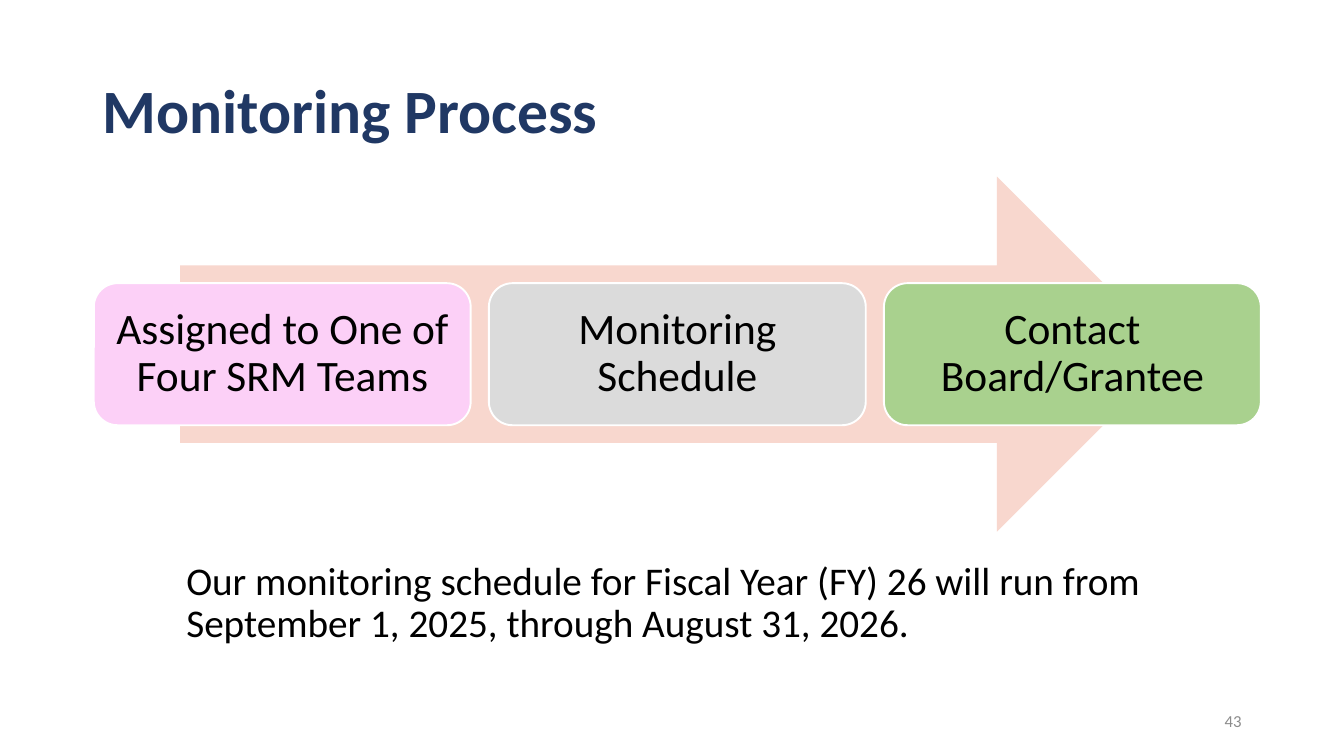
from pptx import Presentation
from pptx.dml.color import RGBColor
from pptx.enum.shapes import MSO_SHAPE as Shape
from pptx.enum.text import MSO_ANCHOR as Anchor, PP_ALIGN as Align
from pptx.util import Pt

NAVY = RGBColor(0x20, 0x38, 0x64)
BLACK = RGBColor(0, 0, 0)
WHITE = RGBColor(0xFF, 0xFF, 0xFF)
GRAY = RGBColor(0x8C, 0x8C, 0x8C)
PEACH = RGBColor(0xF8, 0xD7, 0xCE)
PINK = RGBColor(0xFC, 0xD0, 0xF7)
SILVER = RGBColor(0xDB, 0xDB, 0xDB)
GREEN = RGBColor(0xA9, 0xD1, 0x8E)

STEPS = [
    ("Assigned to One of Four SRM Teams", PINK),
    ("Monitoring Schedule", SILVER),
    ("Contact Board/Grantee", GREEN),
]
SCHEDULE = (
    "Our monitoring schedule for Fiscal Year (FY) 26 will run from "
    "September 1, 2025, through August 31, 2026."
)


def write(shape, text, size, color, align=Align.LEFT, anchor=Anchor.MIDDLE,
          bold=False, line_spacing=0.9, space_before=0):
    """Fill a shape with one styled paragraph."""
    frame = shape.text_frame
    frame.word_wrap = True
    frame.vertical_anchor = anchor
    paragraph = frame.paragraphs[0]
    paragraph.text = text
    paragraph.alignment = align
    paragraph.line_spacing = line_spacing
    paragraph.space_before = Pt(space_before)
    font = paragraph.font
    font.name, font.size, font.bold = "Calibri", Pt(size), bold
    font.color.rgb = color


def add_text(slide, box, text, size, color, **style):
    """Add a text box in the given box, in points."""
    shape = slide.shapes.add_textbox(*map(Pt, box))
    write(shape, text, size, color, **style)


def add_block(slide, kind, box, fill):
    """Add a flat filled shape without outline."""
    shape = slide.shapes.add_shape(kind, *map(Pt, box))
    shape.shadow.inherit = False
    shape.fill.solid()
    shape.fill.fore_color.rgb = fill
    shape.line.fill.background()
    return shape


def add_step(slide, box, text, fill):
    """Add one rounded step card with its label."""
    card = add_block(slide, Shape.ROUNDED_RECTANGLE, box, fill)
    card.line.color.rgb = WHITE
    card.line.width = Pt(1.35)
    frame = card.text_frame
    frame.margin_left = frame.margin_right = Pt(9)
    frame.margin_top = frame.margin_bottom = Pt(9)
    write(card, text, 31, BLACK, align=Align.CENTER)


def add_process(slide, box, steps):
    """Add an arrow with equally spaced step cards across its middle."""
    left, top, width, height = box
    inset, gap = width * 0.074, 13
    arrow = (left + inset, top, width - 2 * inset, height)
    add_block(slide, Shape.RIGHT_ARROW, arrow, PEACH)
    card_width = (width - gap * (len(steps) - 1)) / len(steps)
    card_height = height * 0.4
    card_top = top + (height - card_height) / 2
    for index, (text, fill) in enumerate(steps):
        card_left = left + index * (card_width + gap)
        add_step(slide, (card_left, card_top, card_width, card_height), text, fill)


def main():
    """Build and save the slide."""
    presentation = Presentation()
    presentation.slide_width, presentation.slide_height = Pt(960), Pt(540)
    slide = presentation.slides.add_slide(presentation.slide_layouts[6])
    add_text(slide, (66, 28.75, 828, 104.4), "Monitoring Process", 44, NAVY, bold=True)
    add_process(slide, (67, 126.2, 833.6, 253.6), STEPS)
    add_text(slide, (126, 397.4, 762, 85.7), SCHEDULE, 28, BLACK,
             anchor=Anchor.TOP, space_before=10)
    add_text(slide, (678, 500.5, 216, 28.75), "43", 12, GRAY,
             align=Align.RIGHT, line_spacing=1)
    presentation.save("out.pptx")


if __name__ == "__main__":
    main()
